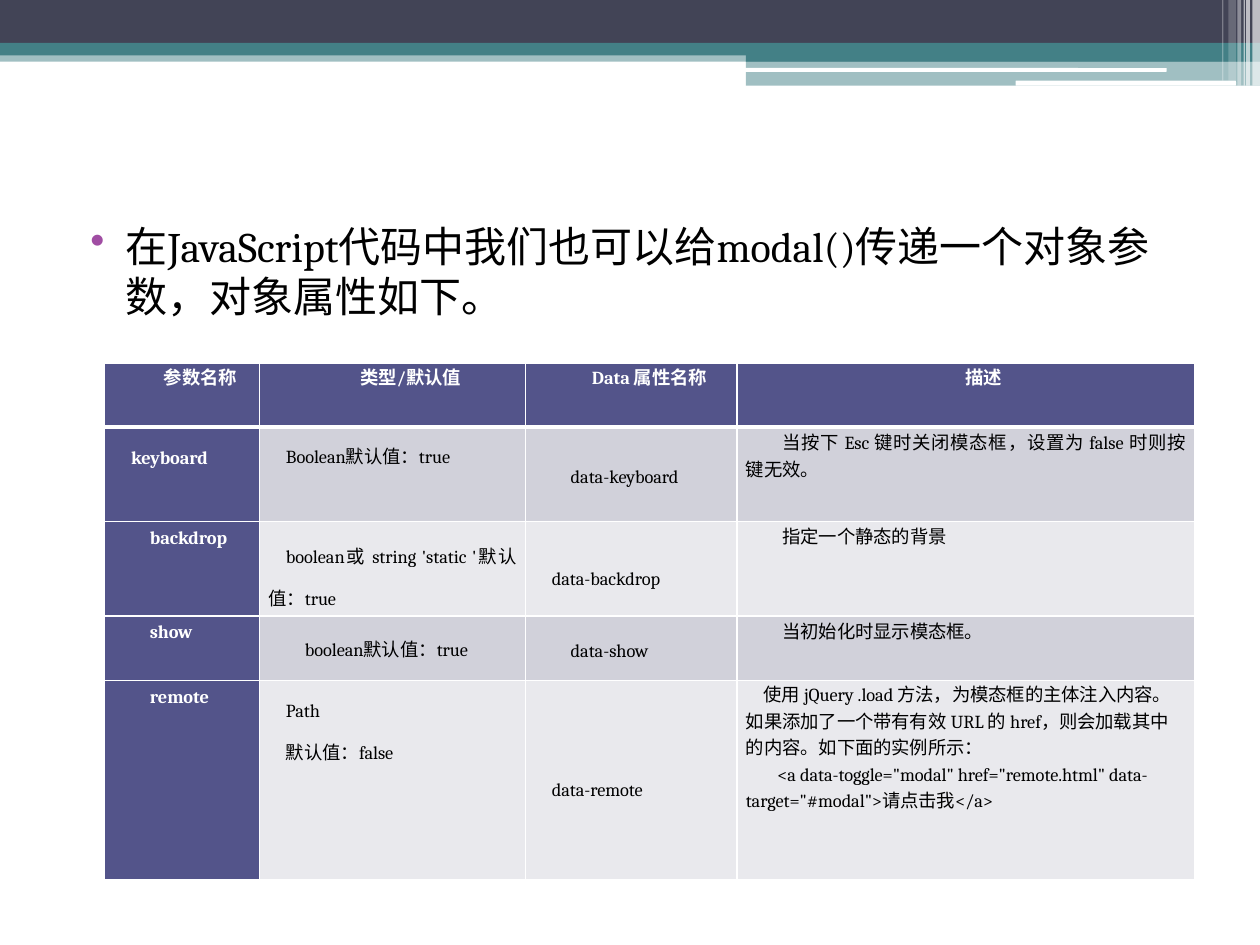
from dataclasses import dataclass
from typing import Any, Optional

from lxml import etree
from pptx import Presentation
from pptx import util as u
from pptx.dml.color import RGBColor
from pptx.enum import shapes, text
from pptx.oxml import ns

SLATE = RGBColor(0x42, 0x44, 0x56)
TEAL = RGBColor(0x43, 0x80, 0x86)
WHITE = RGBColor(0xFF, 0xFF, 0xFF)
BLACK = RGBColor(0, 0, 0)
PURPLE = RGBColor(0xA0, 0x4D, 0xA3)
INDIGO = RGBColor(0x53, 0x54, 0x8A)
BAND_DARK = RGBColor(0xD1, 0xD1, 0xDA)
BAND_LIGHT = RGBColor(0xE9, 0xE9, 0xED)

FONT = "Cambria"
COLUMN_WIDTHS = (1.23, 2.11, 1.68, 3.63)
ROW_HEIGHTS = (0.51, 0.75, 0.75, 0.51, 1.58)
NARROW, WIDE = 0.14, 0.29
TIGHT, LOOSE = 15.6, 24
JUSTIFY = text.PP_ALIGN.JUSTIFY
LEFT = text.PP_ALIGN.LEFT
CENTER = text.PP_ALIGN.CENTER


@dataclass(frozen=True)
class Bar:
    left: float
    top: float
    width: float
    height: float
    color: RGBColor
    opacity: int = 100
    rounded: bool = False


@dataclass(frozen=True)
class Line:
    words: str
    indent: float = WIDE
    spacing: Optional[float] = TIGHT
    align: Any = JUSTIFY


@dataclass(frozen=True)
class Entry:
    lines: tuple[Line, ...]
    middle: bool = False


def entry(words: str, indent: float = WIDE, spacing: float = TIGHT,
          middle: bool = False, align: Any = JUSTIFY) -> Entry:
    return Entry((Line(words, indent, spacing, align),), middle)


BARS = (
    Bar(0, 0.4, 10, 0.09, TEAL, 50),
    Bar(0, 0, 10, 0.34, SLATE),
    Bar(0, 0.34, 10, 0.1, TEAL),
    Bar(5.92, 0.39, 4.08, 0.1, TEAL),
    Bar(5.92, 0.48, 4.08, 0.2, TEAL, 50),
    Bar(5.91, 0.54, 3.35, 0.03, WHITE, rounded=True),
    Bar(8.06, 0.64, 1.75, 0.04, WHITE, rounded=True),
    Bar(9.94, 0, 0.06, 0.68, WHITE, 65),
    Bar(9.89, 0, 0.03, 0.68, WHITE, 65),
    Bar(9.87, 0, 0.01, 0.68, WHITE, 60),
    Bar(9.82, 0, 0.03, 0.68, WHITE, 40),
    Bar(9.75, 0, 0.06, 0.64, WHITE, 20),
    Bar(9.7, 0, 0.01, 0.64, WHITE, 30),
)

HEADINGS = ("参数名称", "类型/默认值", "Data 属性名称", "描述")
ROWS = (
    tuple(entry(heading, align=CENTER) for heading in HEADINGS),
    (entry("keyboard", NARROW, LOOSE),
     entry("Boolean默认值：true", NARROW, LOOSE),
     entry("data-keyboard", middle=True),
     entry("当按下 Esc 键时关闭模态框，设置为 false 时则按键无效。")),
    (entry("backdrop"),
     entry("boolean或 string 'static '默认值：true", NARROW, LOOSE, True),
     entry("data-backdrop", NARROW, LOOSE, True),
     entry("指定一个静态的背景")),
    (entry("show"),
     entry("boolean默认值：true", middle=True),
     entry("data-show", middle=True),
     entry("当初始化时显示模态框。")),
    (entry("remote"),
     Entry((Line("Path", NARROW, LOOSE), Line("默认值：false", NARROW, LOOSE))),
     entry("data-remote", NARROW, LOOSE, True),
     Entry((
         Line("使用 jQuery .load 方法，为模态框的主体注入内容。如果添加了一个带有有效 URL 的 href，"
              "则会加载其中的内容。如下面的实例所示：", NARROW, None, LEFT),
         Line('<a data-toggle="modal" href="remote.html" data-target="#modal">请点击我</a>',
              0.25, 15, LEFT)))),
)


def set_attributes(target: Any, values: dict[str, Any]) -> None:
    for name, value in values.items():
        setattr(target, name, value)


def add_color(parent: Any, color: RGBColor) -> None:
    etree.SubElement(parent, ns.qn("a:srgbClr"), val=str(color))


def set_indent(para: Any, margin: float, indent: float) -> Any:
    properties = para._p.get_or_add_pPr()
    properties.set("marL", str(u.Inches(margin)))
    properties.set("indent", str(u.Inches(indent)))
    return properties


def add_span(para: Any, words: str, size: float, color: RGBColor, bold: bool) -> None:
    span = para.add_run()
    span.text = words
    set_attributes(span.font, {"name": FONT, "size": u.Pt(size), "bold": bold})
    span.font.color.rgb = color


def draw_bar(page: Any, bar: Bar) -> None:
    kind = shapes.MSO_SHAPE.ROUNDED_RECTANGLE if bar.rounded else shapes.MSO_SHAPE.RECTANGLE
    box = page.shapes.add_shape(kind, u.Inches(bar.left), u.Inches(bar.top),
                                u.Inches(bar.width), u.Inches(bar.height))
    box.shadow.inherit = False
    box.line.fill.background()
    box.fill.solid()
    box.fill.fore_color.rgb = bar.color
    if bar.opacity < 100:
        color = box._element.spPr.find(".//" + ns.qn("a:srgbClr"))
        etree.SubElement(color, ns.qn("a:alpha"), val=str(bar.opacity * 1000))


def draw_statement(page: Any) -> None:
    box = page.shapes.add_textbox(u.Inches(0.5), u.Inches(1.7), u.Inches(9), u.Inches(5.28))
    box.text_frame.word_wrap = True
    para = box.text_frame.paragraphs[0]
    para.space_before = u.Pt(3)
    properties = set_indent(para, 0.4, -0.28)
    add_color(etree.SubElement(properties, ns.qn("a:buClr")), PURPLE)
    etree.SubElement(properties, ns.qn("a:buChar"), char="•")
    add_span(para, "在JavaScript代码中我们也可以给modal()传递一个对象参数，对象属性如下。",
             24, BLACK, False)


def set_borders(cell: Any, widths: dict[str, float]) -> None:
    properties = cell._tc.get_or_add_tcPr()
    for position, (side, width) in enumerate(widths.items()):
        border = etree.Element(ns.qn(f"a:ln{side}"), w=str(u.Pt(width)))
        add_color(etree.SubElement(border, ns.qn("a:solidFill")), WHITE)
        properties.insert(position, border)


def fill_cell(cell: Any, content: Entry, fill: RGBColor, strong: bool) -> None:
    anchor = text.MSO_ANCHOR.MIDDLE if content.middle else text.MSO_ANCHOR.TOP
    set_attributes(cell, {"margin_left": u.Inches(0.07), "margin_right": u.Inches(0.07),
                          "margin_top": 0, "margin_bottom": 0, "vertical_anchor": anchor})
    cell.fill.solid()
    cell.fill.fore_color.rgb = fill
    for number, line in enumerate(content.lines):
        frame = cell.text_frame
        para = frame.add_paragraph() if number else frame.paragraphs[0]
        para.alignment = line.align
        if line.spacing:
            para.line_spacing = u.Pt(line.spacing)
        set_indent(para, 0, line.indent)
        add_span(para, line.words, 10.5, WHITE if strong else BLACK, strong)


def draw_table(page: Any) -> None:
    frame = page.shapes.add_table(len(ROWS), len(COLUMN_WIDTHS), u.Inches(0.83), u.Inches(2.88),
                                  u.Inches(sum(COLUMN_WIDTHS)), u.Inches(sum(ROW_HEIGHTS)))
    table = frame.table
    for column, width in zip(table.columns, COLUMN_WIDTHS):
        column.width = u.Inches(width)
    for row, height in zip(table.rows, ROW_HEIGHTS):
        row.height = u.Inches(height)
    for r, contents in enumerate(ROWS):
        for c, content in enumerate(contents):
            strong = r == 0 or c == 0
            band = BAND_DARK if r % 2 else BAND_LIGHT
            cell = table.cell(r, c)
            fill_cell(cell, content, INDIGO if strong else band, strong)
            set_borders(cell, {"L": 1, "R": 1, "T": 3 if r == 1 else 1, "B": 3 if r == 0 else 1})


def main() -> None:
    deck = Presentation()
    set_attributes(deck, {"slide_width": u.Inches(10), "slide_height": u.Inches(7.5)})
    page = deck.slides.add_slide(deck.slide_layouts[6])
    for bar in BARS:
        draw_bar(page, bar)
    draw_statement(page)
    draw_table(page)
    deck.save("out.pptx")


if __name__ == "__main__":
    main()
